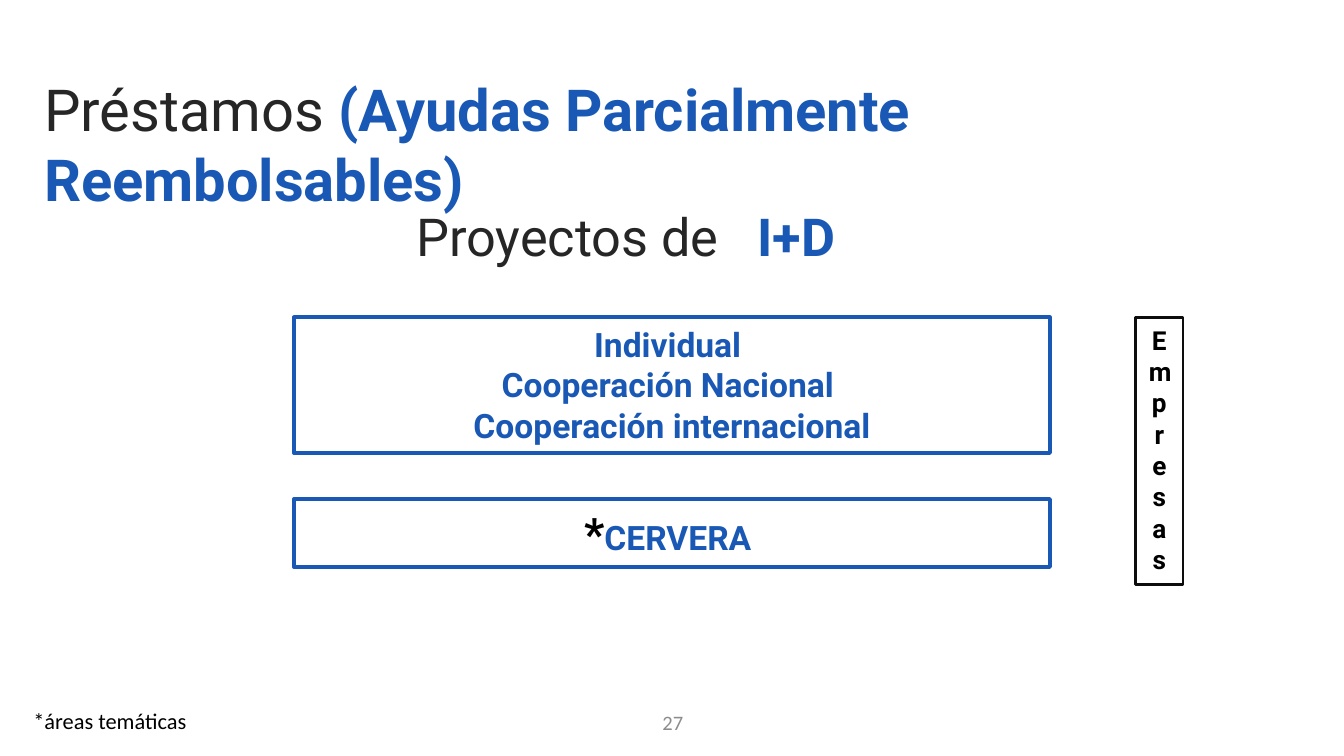
from dataclasses import dataclass
from typing import Optional

from pptx import Presentation
from pptx import util as u
from pptx.dml.color import RGBColor
from pptx.enum import shapes, text

BLUE = RGBColor(0x19, 0x58, 0xB4)
DARK = RGBColor(0x26, 0x26, 0x26)
EDGE = RGBColor(0x0D, 0x0D, 0x0D)
BLACK = RGBColor(0, 0, 0)
GRAY = RGBColor(0x8C, 0x8C, 0x8C)
WHITE = RGBColor(255, 255, 255)

LEFT, MID = text.PP_ALIGN.LEFT, text.PP_ALIGN.CENTER


@dataclass
class Run:
    words: str
    size: float
    color: RGBColor
    bold: bool = False
    font: str = "Roboto"


@dataclass
class Box:
    left: float
    top: float
    width: float
    height: float
    lines: list[list[Run]]
    align: text.PP_ALIGN = LEFT
    anchor: text.MSO_ANCHOR = text.MSO_ANCHOR.TOP
    edge: Optional[RGBColor] = None
    weight: float = 2
    fill: Optional[RGBColor] = None


def write(frame, box: Box) -> None:
    """Fill a text frame with the lines of a box."""
    frame.word_wrap = True
    frame.vertical_anchor = box.anchor
    for i, line in enumerate(box.lines):
        para = frame.add_paragraph() if i else frame.paragraphs[0]
        para.alignment = box.align
        for item in line:
            run = para.add_run()
            run.text = item.words
            run.font.name = item.font
            run.font.size = u.Pt(item.size)
            run.font.bold = item.bold
            run.font.color.rgb = item.color


def draw(slide, box: Box) -> None:
    """Draw a framed rectangle, or a plain text box if it has no edge."""
    area = [u.Pt(n) for n in (box.left, box.top, box.width, box.height)]
    if box.edge is None:
        shape = slide.shapes.add_textbox(*area)
    else:
        shape = slide.shapes.add_shape(shapes.MSO_SHAPE.RECTANGLE, *area)
        shape.shadow.inherit = False
        shape.line.color.rgb = box.edge
        shape.line.width = u.Pt(box.weight)
        if box.fill is None:
            shape.fill.background()
        else:
            shape.fill.solid()
            shape.fill.fore_color.rgb = box.fill
    write(shape.text_frame, box)


def panel(top: float, height: float, lines: list[list[Run]]) -> Box:
    """A blue frame in the centre column."""
    return Box(157.5, top, 405, height, lines, MID, edge=BLUE, fill=WHITE)


KINDS = ("Individual ", "Cooperación Nacional ", "Cooperación internacional")

BOXES = [
    # Page number
    Box(340, 376, 41, 21.5, [[Run("27", 11, GRAY, font="Calibri")]],
        MID, text.MSO_ANCHOR.MIDDLE),
    # Upright label, one letter to a line
    Box(608.4, 170, 25.4, 143.3, [[Run("Empresas", 14, BLACK, True)]],
        MID, edge=EDGE, weight=1.5),
    # Project types
    panel(170, 72.7, [[Run(kind, 18, BLUE, True)] for kind in KINDS]),
    panel(267.4, 36.4, [[Run("*", 24, BLACK, True),
                         Run("CERVERA ", 18, BLUE, True)]]),
    # Footnote
    Box(10.8, 375.2, 215.3, 21.8,
        [[Run("*áreas temáticas", 12, BLACK, font="Calibri")]]),
    # Title and subtitle
    Box(16.6, 36, 703.4, 44.6,
        [[Run("Préstamos ", 31, DARK),
          Run("(Ayudas Parcialmente Reembolsables)", 31, BLUE, True)]]),
    Box(216, 105.8, 269.3, 41,
        [[Run("Proyectos de  ", 28, DARK), Run(" I+D", 28, BLUE, True)]]),
]


def main() -> None:
    deck = Presentation()
    deck.slide_width, deck.slide_height = u.Pt(720), u.Pt(405)
    slide = deck.slides.add_slide(deck.slide_layouts[6])
    for box in BOXES:
        draw(slide, box)
    deck.save("out.pptx")


if __name__ == "__main__":
    main()
